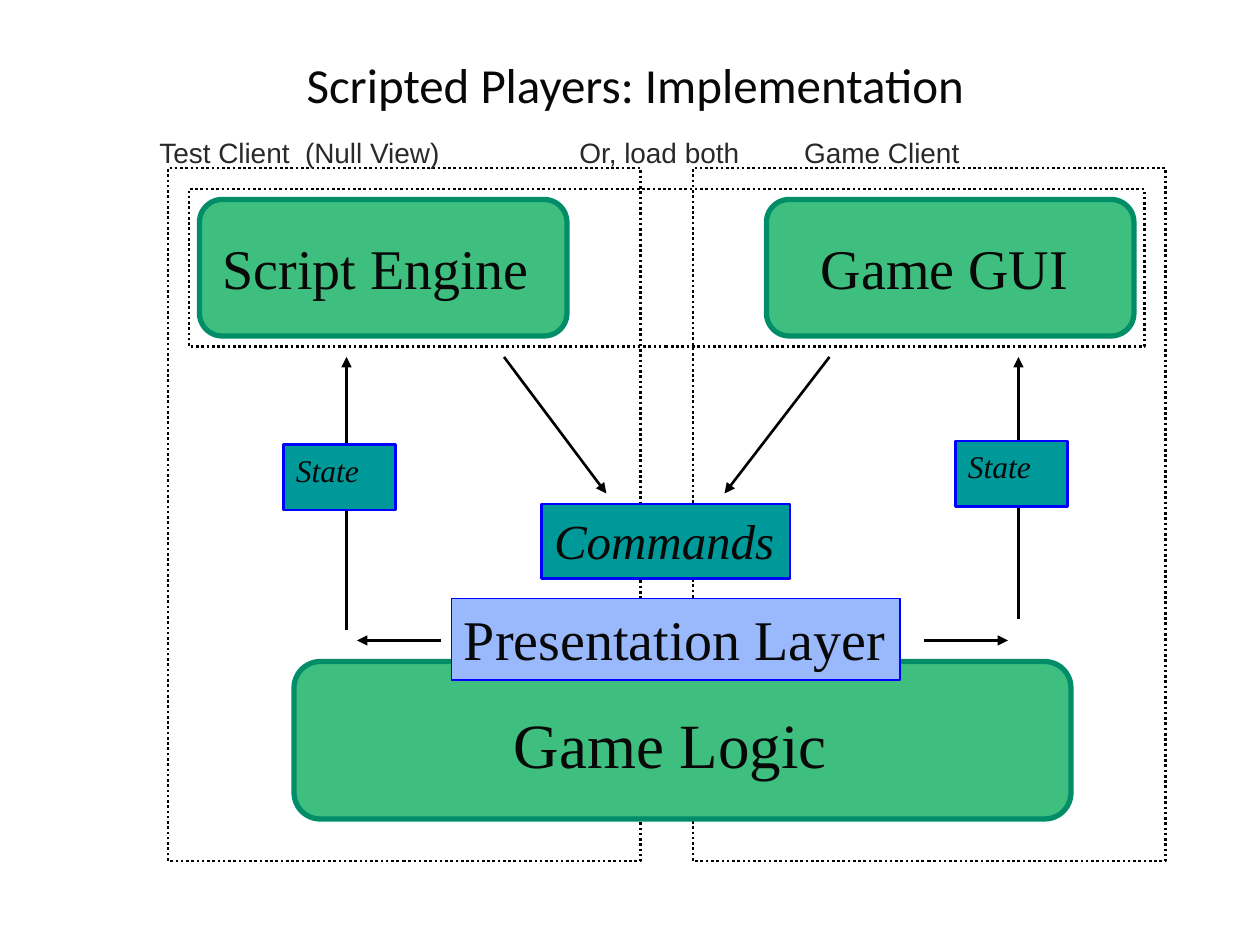
from lxml import etree
from pptx import Presentation
from pptx.dml.color import RGBColor
from pptx.enum.dml import MSO_LINE
from pptx.enum.shapes import MSO_CONNECTOR, MSO_SHAPE
from pptx.enum.text import MSO_ANCHOR, PP_ALIGN
from pptx.oxml.ns import qn
from pptx.util import Pt

RECT, ROUND = MSO_SHAPE.RECTANGLE, MSO_SHAPE.ROUNDED_RECTANGLE
STRAIGHT = MSO_CONNECTOR.STRAIGHT
DOTTED = MSO_LINE.ROUND_DOT
TOP, MIDDLE = MSO_ANCHOR.TOP, MSO_ANCHOR.MIDDLE
LEFT, CENTER = PP_ALIGN.LEFT, PP_ALIGN.CENTER

COLORS = {"black": "000000", "text": "080808", "label": "292929",
          "green": "3FBF7F", "dark green": "018D68", "teal": "009999",
          "blue": "0000FF", "light blue": "9AB8FC"}

# Places are (left, top, width, height)
TITLE = ("Scripted Players: Implementation", (84, 24, 558, 48))
CLIENT_LABELS = ("Test Client  (Null View)\tGame Client", (84, 60, 612, 54))
GAME_CLIENT_TAB = 368.5
BOTH_LABEL = ("Or, load both", (324, 78, 114, 18))

CLIENT_FRAMES = [(396, 96, 270, 396), (96, 96, 270, 396)]
BOTH_FRAME = (108, 108, 546, 90)

# Component place, caption, caption place, caption size
COMPONENTS = [
    ((114, 114, 210, 78), "Script Engine", (120, 130, 189.5, 45.5), 32),
    ((438, 114, 210, 78), "Game GUI", (462, 130, 155.5, 45.5), 32),
    ((168, 378, 444, 90), "Game Logic", (286.5, 399.5, 194, 50.5), 36),
]

# Arrows as (x1, y1, x2, y2), pointing at the second end
ARROWS = [
    (288, 204, 346.5, 282), (474, 204, 414, 282),      # commands
    (198, 360, 198, 204), (582, 354, 582, 204),        # state
    (252, 366, 204, 366), (528, 366, 576, 366),        # presentation layer
]

# Text, place, size, italic, fill, line width
MESSAGES = [
    ("State", (162, 254, 64, 37.5), 18, True, "teal", 1.5),
    ("State", (546, 252, 64, 37.5), 18, True, "teal", 1.5),
    ("Commands", (309.5, 288, 142, 42.5), 28, True, "teal", 1.5),
    ("Presentation Layer", (258, 342, 256.5, 46.5), 32, False, "light blue", 1),
]


def rgb(name):
    return RGBColor.from_string(COLORS[name])


def points(place):
    return [Pt(v) for v in place]


def write(s, text, size, font="Times New Roman", color="text", italic=False,
          align=LEFT, anchor=TOP):
    tf = s.text_frame
    tf.word_wrap = True
    tf.vertical_anchor = anchor
    p = tf.paragraphs[0]
    p.alignment = align
    r = p.add_run()
    r.text = text
    r.font.name, r.font.size, r.font.italic = font, Pt(size), italic
    r.font.color.rgb = rgb(color)
    return p


def add_box(place, kind=RECT, fill=None, line=None, width=1.5, dash=None):
    s = shapes.add_shape(kind, *points(place))
    s.shadow.inherit = False
    if fill:
        s.fill.solid()
        s.fill.fore_color.rgb = rgb(fill)
    else:
        s.fill.background()
    if line:
        s.line.color.rgb = rgb(line)
        s.line.width = Pt(width)
        if dash:
            s.line.dash_style = dash
    else:
        s.line.fill.background()
    return s


def add_caption(text, place, size, italic=False, **style):
    """Box with left-aligned text; no right inset, so tight text stays on one line."""
    s = add_box(place, **style)
    write(s, text, size, italic=italic)
    s.text_frame.margin_right = 0


def add_arrow(ends):
    s = shapes.add_connector(STRAIGHT, *points(ends))
    s.line.color.rgb = rgb("black")
    s.line.width = Pt(1.5)
    etree.SubElement(s.line._get_or_add_ln(), qn("a:tailEnd"), type="triangle")
    etree.SubElement(s._element.spPr, qn("a:effectLst"))


def add_label(text, place):
    s = shapes.add_textbox(*points(place))
    return write(s, text, 16, font="Arial", color="label", anchor=MIDDLE)


def set_tab(p, position):
    tabs = etree.SubElement(p._p.get_or_add_pPr(), qn("a:tabLst"))
    etree.SubElement(tabs, qn("a:tab"), pos=str(Pt(position)), algn="l")


prs = Presentation()
prs.slide_width, prs.slide_height = Pt(720), Pt(540)
slide = prs.slides.add_slide(prs.slide_layouts[5])
shapes = slide.shapes

text, place = TITLE
title = shapes.title
title.left, title.top, title.width, title.height = points(place)
write(title, text, 28, font="Calibri", align=CENTER, anchor=MIDDLE)

for place in CLIENT_FRAMES:
    add_box(place, line="black", dash=DOTTED)
set_tab(add_label(*CLIENT_LABELS), GAME_CLIENT_TAB)

for place, text, text_place, size in COMPONENTS:
    add_box(place, ROUND, "green", "dark green", 3)
    add_caption(text, text_place, size, fill="green")

for ends in ARROWS:
    add_arrow(ends)

for text, place, size, italic, fill, width in MESSAGES:
    add_caption(text, place, size, italic, fill=fill, line="blue", width=width)

add_box(BOTH_FRAME, line="black", dash=DOTTED)
add_label(*BOTH_LABEL)

prs.save("out.pptx")
